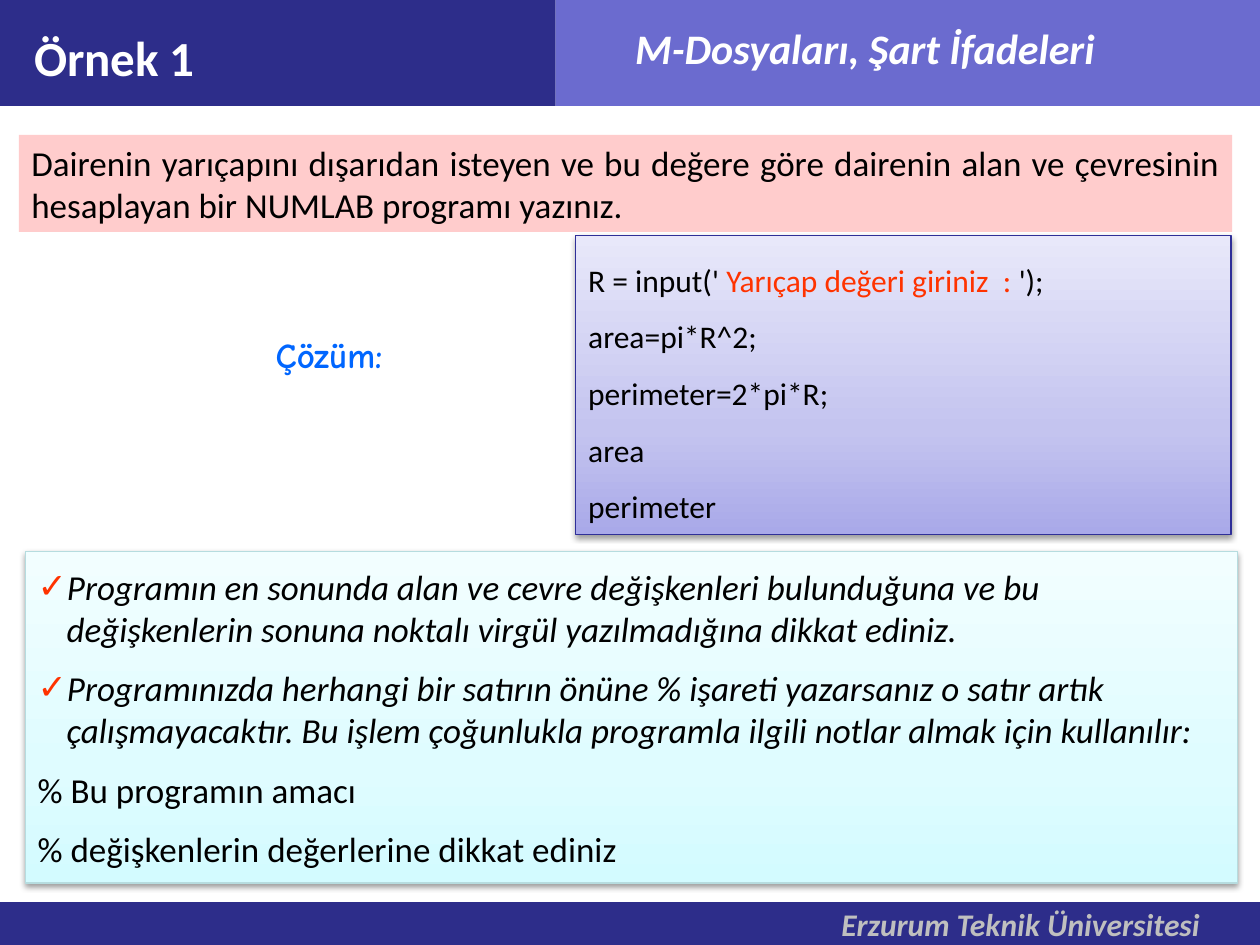
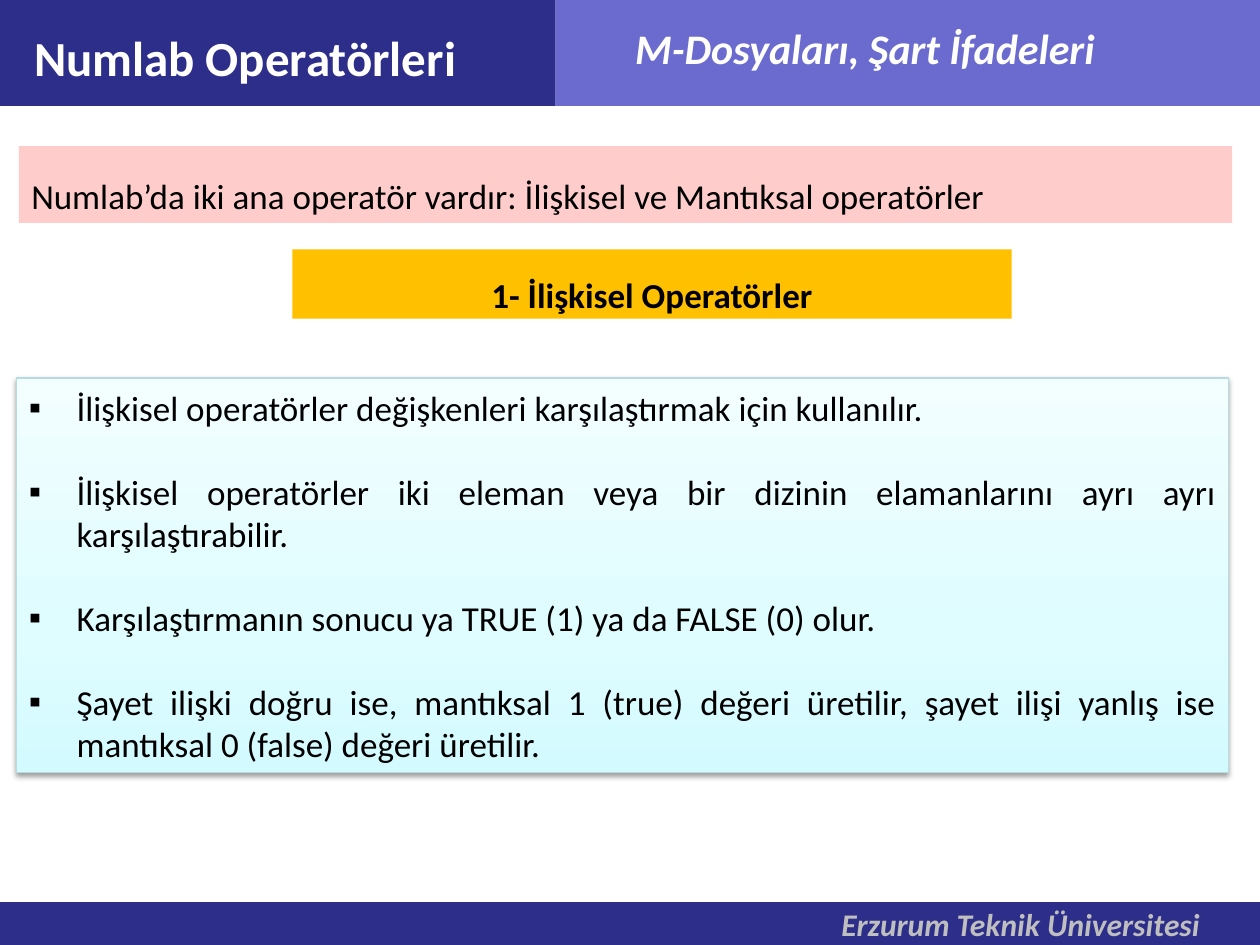
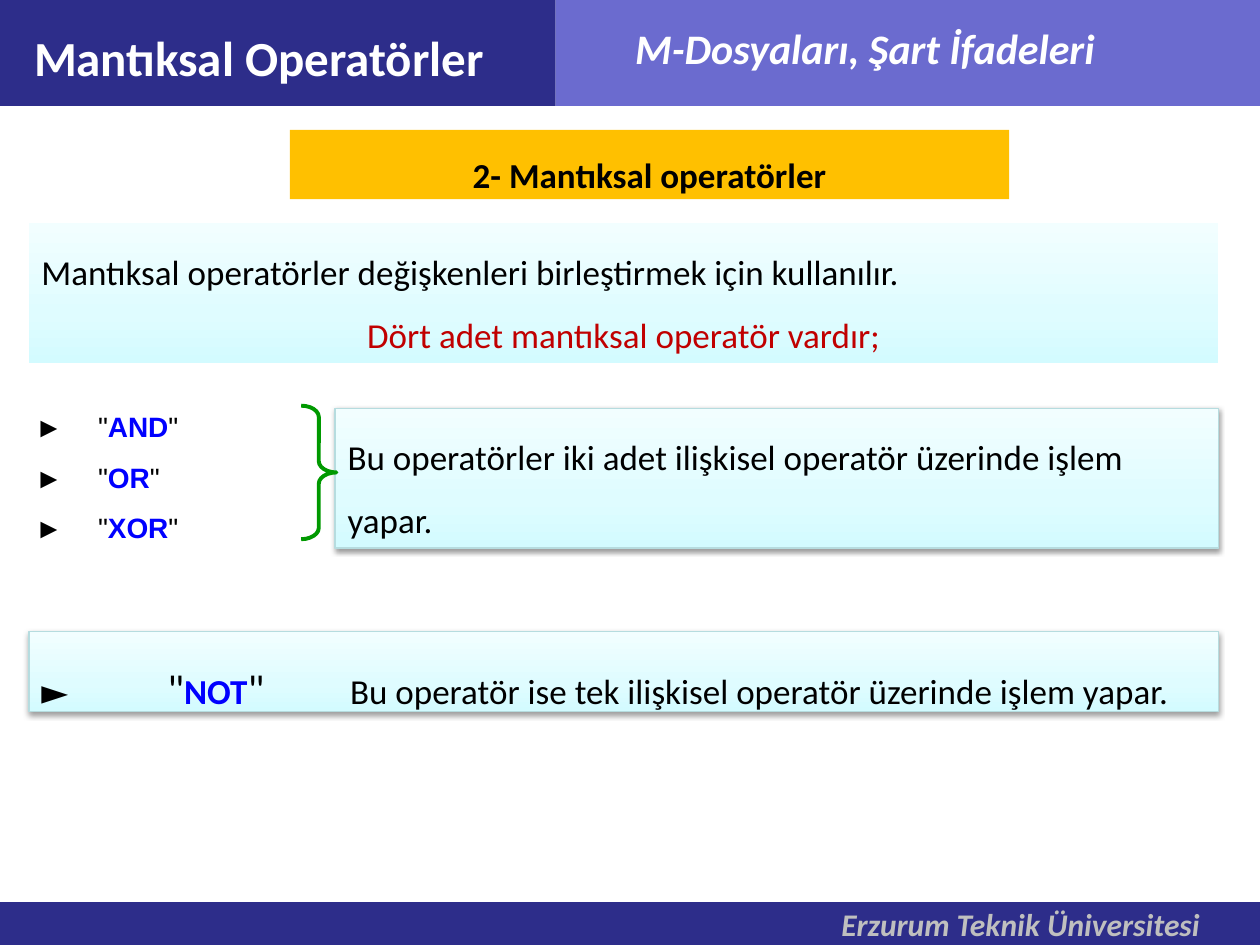
from lxml import etree
from pptx import Presentation
from pptx import util as u
from pptx.dml import color
from pptx.enum import shapes, text
from pptx.oxml import ns, parse_xml

# Grid: 100 columns by 75 rows on a 10 by 7.5 inch slide
WIDE, HIGH = u.Inches(10), u.Inches(7.5)
COLS, ROWS = 100, 75

# Shared look
FONT = "Calibri"
NAVY, LILAC, WHITE, BLACK = "2D2D8A", "6B6BCF", "FFFFFF", "000000"
PINK, GOLD, RED, BLUE = "FFCCCC", "FFC000", "FF3300", "0000FF"
ICE = ("D3FBFF", "DFFCFF", "F2FEFF")
MAUVE = ("A9A9E9", "C4C4EF", "E8E8FA")
ICE_EDGE, MAUVE_EDGE = "B6DCDF", "2F2F98"
LEFT, MID, JUST = (text.PP_ALIGN.LEFT, text.PP_ALIGN.CENTER,
                   text.PP_ALIGN.JUSTIFY)
TOP, HALF = text.MSO_ANCHOR.TOP, text.MSO_ANCHOR.MIDDLE
SHADE = ('<a:effectLst %s><a:outerShdw blurRad="40000" dist="20000" '
         'dir="5400000" rotWithShape="0"><a:srgbClr val="000000">'
         '<a:alpha val="38000"/></a:srgbClr></a:outerShdw></a:effectLst>')


def rgb(code):
    return color.RGBColor.from_string(code)


def place(col, row, cols, rows):
    """Turn grid units into left, top, width, height."""
    return [int(n * size / count) for n, size, count in (
        (col, WIDE, COLS), (row, HIGH, ROWS),
        (cols, WIDE, COLS), (rows, HIGH, ROWS))]


# Text
def style(run, size=20, font=FONT, ink=BLACK, bold=False, slant=False):
    face = run.font
    face.size, face.name = u.Pt(size), font
    face.bold, face.italic = bold, slant
    face.color.rgb = rgb(ink)


def mark(para, sign, ink, indent):
    """Give a paragraph a bullet with a hanging indent."""
    props = para._p.get_or_add_pPr()
    props.set("marL", str(u.Inches(indent)))
    props.set("indent", str(-u.Inches(indent)))
    tint = etree.SubElement(props, ns.qn("a:buClr"))
    etree.SubElement(tint, ns.qn("a:srgbClr"), val=ink)
    etree.SubElement(props, ns.qn("a:buFont"), typeface="Arial")
    etree.SubElement(props, ns.qn("a:buChar"), char=sign)


def tabs(para, *stops):
    props = para._p.get_or_add_pPr()
    row = etree.SubElement(props, ns.qn("a:tabLst"))
    for stop in stops:
        etree.SubElement(row, ns.qn("a:tab"), pos=str(u.Inches(stop)),
                         algn="l")


def write(shape, lines, align=LEFT, anchor=TOP, lead=1, gap=0, **look):
    """Fill a shape; a line is a string or a list of (words, look) runs."""
    frame = shape.text_frame
    frame.word_wrap, frame.auto_size = True, text.MSO_AUTO_SIZE.NONE
    frame.vertical_anchor = anchor
    frame.text = "\n".join(
        line if isinstance(line, str) else "" for line in lines)
    for para, line in zip(frame.paragraphs, lines):
        para.alignment, para.line_spacing = align, lead
        para.space_before = u.Pt(gap)
        if isinstance(line, str):
            for run in para.runs:
                style(run, **look)
            continue
        for words, more in line:
            run = para.add_run()
            run.text = words
            style(run, **{**look, **more})
    return frame.paragraphs


# Shapes
def box(slide, area, fill):
    shape = slide.shapes.add_shape(shapes.MSO_SHAPE.RECTANGLE, *place(*area))
    shape.shadow.inherit = False
    shape.fill.solid()
    shape.fill.fore_color.rgb = rgb(fill)
    shape.line.fill.background()
    return shape


def panel(slide, area, tones=ICE, edge=ICE_EDGE):
    """A box shaded upward; with an edge it also casts a shadow."""
    shape = box(slide, area, tones[0])
    props = shape._element.spPr
    stops = "".join(
        f'<a:gs pos="{pos}000"><a:srgbClr val="{tone}"/></a:gs>'
        for pos, tone in zip((0, 35, 100), tones))
    props.replace(props.find(ns.qn("a:solidFill")), parse_xml(
        f'<a:gradFill {ns.nsdecls("a")} rotWithShape="1"><a:gsLst>{stops}'
        '</a:gsLst><a:lin ang="16200000" scaled="0"/></a:gradFill>'))
    if edge:
        shape.line.color.rgb = rgb(edge)
        shape.line.width = u.Pt(0.75)
        props.replace(props.find(ns.qn("a:effectLst")),
                      parse_xml(SHADE % ns.nsdecls("a")))
    return shape


def label(slide, area, lines, **look):
    shape = slide.shapes.add_textbox(*place(*area))
    return write(shape, lines, **look)


def banner(slide, col, row, words):
    write(box(slide, (col, row, 57.1, 5.5), GOLD), [words], align=MID,
          anchor=HALF, lead=1.5, bold=True)


def brace(slide, area):
    shape = slide.shapes.add_shape(shapes.MSO_SHAPE.RIGHT_BRACE, *place(*area))
    shape.shadow.inherit = False
    shape.adjustments[0] = 0.32
    shape.fill.background()
    shape.line.color.rgb = rgb("009900")
    shape.line.width = u.Pt(2.25)


# Shared frame
def frame(deck, layout):
    """Draw the bands on a slide, then move them to its layout."""
    slide = deck.slides.add_slide(layout)
    title = slide.shapes.title
    box(slide, (0, 71.6, COLS, 3.4), NAVY)
    box(slide, (0, 0, 44.1, 8.4), NAVY)
    box(slide, (44.1, 0, 55.9, 8.4), LILAC)
    label(slide, (37.4, 1.3, 62.5, 5), ["M-Dosyaları, Şart İfadeleri"],
          align=MID, size=24, ink=WHITE, bold=True, slant=True)
    label(slide, (65.8, 71.3, 34.2, 3.7), ["Erzurum Teknik Üniversitesi"],
          size=18, ink="BFBFBF", bold=True, slant=True)
    tree = layout.shapes.element
    parts = [part for part in slide.shapes if part.shape_id != title.shape_id]
    for spot, part in enumerate(parts, 2):
        tree.insert(spot, part.element)
    return slide


def head(slide, words):
    title = slide.shapes.title
    title.left, title.top, title.width, title.height = place(
        1.7, 1.7, 47.1, 5.2)
    write(title, [words], anchor=HALF, size=28, ink=WHITE, bold=True)
    area = title.text_frame
    area.margin_left = area.margin_right = u.Inches(0.1)
    area.margin_top, area.margin_bottom = u.Inches(0.05), 0


# Slides
def sample(slide):
    head(slide, "Örnek 1")
    write(box(slide, (1.5, 10.7, 96.3, 7.7), PINK), [
        "Dairenin yarıçapını dışarıdan isteyen ve bu değere göre dairenin "
        "alan ve çevresinin hesaplayan bir NUMLAB programı yazınız."],
        align=JUST, anchor=HALF)
    write(panel(slide, (45.7, 18.7, 52, 23.7), MAUVE, MAUVE_EDGE), [
        [("R = input(' ", {}), ("Yarıçap değeri giriniz  :", {"ink": RED}),
         (" ');", {})],
        "area=pi*R^2;", "perimeter=2*pi*R;", "area", "perimeter"],
        lead=1.5, size=18)
    label(slide, (20.9, 25.9, 13, 4.4), ["Çözüm:"], anchor=HALF,
          font="Comic Neue", ink="0066FF", bold=True)
    tips = [
        "Programın en sonunda alan ve cevre değişkenleri bulunduğuna ve bu "
        "değişkenlerin sonuna noktalı virgül yazılmadığına dikkat ediniz.",
        "Programınızda herhangi bir satırın önüne % işareti yazarsanız o "
        "satır artık çalışmayacaktır. Bu işlem çoğunlukla programla ilgili "
        "notlar almak için kullanılır:"]
    notes = ["% Bu programın amacı", "% değişkenlerin değerlerine dikkat ediniz"]
    lines = [[(tip, {"slant": True})] for tip in tips] + notes
    paras = write(panel(slide, (2, 43.8, 96.2, 26.3)), lines, anchor=HALF,
                  gap=10)
    for para in paras[:len(tips)]:
        mark(para, "✓", RED, 0.23)


def compare(slide):
    head(slide, "Numlab Operatörleri")
    write(box(slide, (1.5, 11.6, 96.3, 6.1), PINK), [
        "Numlab’da iki ana operatör vardır: İlişkisel ve Mantıksal "
        "operatörler"], align=JUST, anchor=HALF, lead=1.5)
    paras = write(panel(slide, (1.3, 30, 96.2, 31.3)), [
        "İlişkisel operatörler değişkenleri karşılaştırmak için kullanılır.",
        "İlişkisel operatörler iki eleman veya bir dizinin elamanlarını ayrı "
        "ayrı karşılaştırabilir.",
        "Karşılaştırmanın sonucu ya TRUE (1) ya da FALSE (0) olur.",
        "Şayet ilişki doğru ise, mantıksal 1 (true) değeri üretilir, şayet "
        "ilişi yanlış ise mantıksal 0 (false) değeri üretilir."],
        align=JUST, anchor=HALF, gap=24)
    paras[0].space_before = 0
    for para in paras:
        mark(para, "▪", BLACK, 0.38)
    banner(slide, 23.2, 19.8, "1- İlişkisel Operatörler")


def logic(slide):
    head(slide, "Mantıksal Operatörler")
    intro = write(panel(slide, (2.3, 17.7, 94.4, 11.1), edge=None), [
        "Mantıksal operatörler değişkenleri birleştirmek için kullanılır.",
        [("Dört adet mantıksal operatör vardır;", {"ink": "C00000"})]],
        align=JUST, lead=1.5)
    intro[1].alignment = MID
    key = {"ink": BLUE, "bold": True}
    label(slide, (1.8, 30.7, 21, 12.8), [
        [("►\t\"", {}), (name, key), ("\"", {})]
        for name in ("AND", "OR", "XOR")], lead=1.5, size=16, font="Arial")
    write(panel(slide, (26.6, 32.4, 70.1, 11.1)), [
        "Bu operatörler iki adet ilişkisel operatör üzerinde işlem yapar."],
        lead=1.5, gap=10)
    quote = {"size": 24}
    paras = write(panel(slide, (2.3, 50.1, 94.4, 6.4)), [
        [("►\t", {}), ("\"", quote), ("NOT", key), ("\"\t", quote),
         ("Bu operatör ise tek ilişkisel operatör üzerinde işlem yapar.", {})]],
        lead=1.5, gap=10)
    tabs(paras[0], 1, 2.45)
    brace(slide, (23.9, 32.2, 2.8, 10.6))
    banner(slide, 23, 10.3, "2- Mantıksal operatörler")


def main():
    deck = Presentation()
    deck.slide_width, deck.slide_height = WIDE, HIGH
    layout = deck.slide_layouts[5]
    sample(frame(deck, layout))
    for build in (compare, logic):
        build(deck.slides.add_slide(layout))
    deck.save("out.pptx")


if __name__ == "__main__":
    main()
